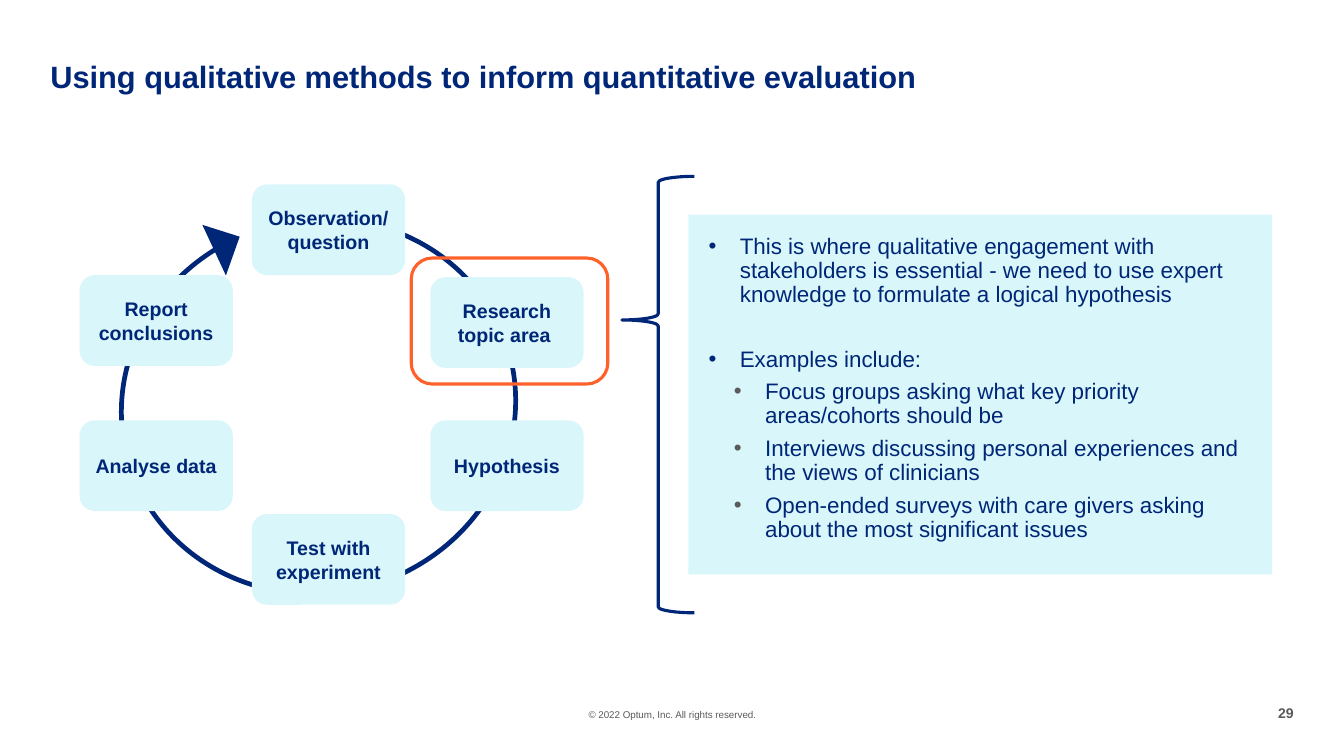
import pptx
import pptx.dml.color
import pptx.enum.shapes
import pptx.enum.text
import pptx.oxml
import pptx.oxml.ns
import pptx.util

RGBColor = pptx.dml.color.RGBColor
Shape = pptx.enum.shapes.MSO_SHAPE
Align = pptx.enum.text.PP_ALIGN
Anchor = pptx.enum.text.MSO_ANCHOR
Pt = pptx.util.Pt

NAVY = RGBColor(0x00, 0x26, 0x77)
AQUA = RGBColor(0xD9, 0xF6, 0xFA)
ORANGE = RGBColor(0xFF, 0x61, 0x2B)
GREY = RGBColor(0x5A, 0x5A, 0x5A)

COLUMNS, ROWS = 40, 30
LEFT, MIDDLE, RIGHT = 2.37, 7.5, 12.81
NODE_SIZE = (4.56, 3.6)
NODES = [
    ("Observation/ question", MIDDLE, 7.32),
    ("Report conclusions", LEFT, 10.92),
    ("Research topic area ", RIGHT, 11),
    ("Analyse data", LEFT, 16.68),
    ("Hypothesis", RIGHT, 16.68),
    ("Test with experiment", MIDDLE, 20.4),
]
POINTS = [
    (0, 0, "This is where qualitative engagement with stakeholders is essential"
           " - we need to use expert knowledge to formulate a logical hypothesis"),
    (0, 29, "Examples include:"),
    (1, 6, "Focus groups asking what key priority areas/cohorts should be"),
    (1, 6, "Interviews discussing personal experiences and the views of clinicians"),
    (1, 6, "Open-ended surveys with care givers asking about the most significant issues"),
]


def apply(target, formats):
    """Set every attribute named in formats on target."""
    for name, value in formats.items():
        setattr(target, name, value)


class Page:
    """Draws styled elements on one slide, measured in grid columns and rows."""

    def __init__(self, deck):
        """Add a title-only slide to the deck."""
        self.column = deck.slide_width / COLUMNS
        self.row = deck.slide_height / ROWS
        self.slide = deck.slides.add_slide(deck.slide_layouts[5])

    def frame(self, left, top, width, height):
        """Turn grid units into slide lengths."""
        return (round(left * self.column), round(top * self.row),
                round(width * self.column), round(height * self.row))

    def add_span(self, para, text, size, color=NAVY, bold=False):
        """Add one styled span of text to a paragraph."""
        span = para.add_run()
        span.text = text
        apply(span.font, {"name": "Arial", "size": Pt(size), "bold": bold})
        span.font.color.rgb = color

    def setup(self, box, margin=0.0, anchor=Anchor.TOP):
        """Give a box wrapped text with equal margins."""
        inset = pptx.util.Inches(margin)
        apply(box.text_frame, {
            "word_wrap": True, "auto_size": pptx.enum.text.MSO_AUTO_SIZE.NONE,
            "vertical_anchor": anchor, "margin_left": inset, "margin_right": inset,
            "margin_top": inset, "margin_bottom": inset})
        return box.text_frame

    def title(self, text, place):
        """Move and fill the title placeholder."""
        box = self.slide.shapes.title
        apply(box, dict(zip(("left", "top", "width", "height"), self.frame(*place))))
        para = self.setup(box).paragraphs[0]
        apply(para, {"alignment": Align.LEFT, "line_spacing": 0.9})
        self.add_span(para, text, 22, bold=True)

    def label(self, text, place, size, align, bold=False):
        """Add a small grey text box."""
        box = self.slide.shapes.add_textbox(*self.frame(*place))
        para = self.setup(box).paragraphs[0]
        para.alignment = align
        self.add_span(para, text, size, GREY, bold)

    def shape(self, kind, place, fill=None, line=None, adjustments=(), rotation=0):
        """Add a preset shape with an optional fill and outline."""
        box = self.slide.shapes.add_shape(kind, *self.frame(*place))
        box.shadow.inherit = False
        box.rotation = rotation
        for index, value in enumerate(adjustments):
            box.adjustments[index] = value
        if fill is None:
            box.fill.background()
        else:
            box.fill.solid()
            box.fill.fore_color.rgb = fill
        if line is None:
            box.line.fill.background()
        else:
            box.line.color.rgb = line
            box.line.width = Pt(2.25)
        return box

    def node(self, text, left, top):
        """Add one step of the research cycle."""
        box = self.shape(Shape.ROUNDED_RECTANGLE, (left, top, *NODE_SIZE), AQUA)
        para = self.setup(box, 0.08, Anchor.MIDDLE).paragraphs[0]
        para.alignment = Align.CENTER
        self.add_span(para, text, 14, bold=True)

    def bullet(self, para, level):
        """Give a paragraph a hanging bullet for its level."""
        properties = para._p.get_or_add_pPr()
        hang = pptx.util.Inches(0.31)
        properties.set("marL", str(hang + level * pptx.util.Inches(0.25)))
        properties.set("indent", str(-hang))
        namespace = pptx.oxml.ns.nsdecls("a")
        color = GREY if level else NAVY
        for markup in (f'<a:buClr {namespace}><a:srgbClr val="{color}"/></a:buClr>',
                       f'<a:buFont {namespace} typeface="Arial"/>',
                       f'<a:buChar {namespace} char="•"/>'):
            properties.append(pptx.oxml.parse_xml(markup))

    def panel(self, points, place):
        """Add a filled panel with a bulleted list."""
        text_frame = self.setup(self.shape(Shape.RECTANGLE, place, AQUA), 0.2)
        for index, (level, before, text) in enumerate(points):
            para = text_frame.add_paragraph() if index else text_frame.paragraphs[0]
            self.bullet(para, level)
            apply(para, {"level": level, "alignment": Align.LEFT, "line_spacing": 0.9})
            if index:
                para.space_before = Pt(before)
            self.add_span(para, text, 16)


def main():
    """Build and save the deck."""
    deck = pptx.Presentation()
    apply(deck, {"slide_width": pptx.util.Inches(13.33),
                 "slide_height": pptx.util.Inches(7.5)})
    page = Page(deck)
    page.label("© 2022 Optum, Inc. All rights reserved.",
               (15.42, 28.12, 9.18, 0.48), 7, Align.CENTER)
    page.label("29", (36.5, 27.96, 2, 0.68), 10, Align.RIGHT, bold=True)
    page.shape(Shape.CIRCULAR_ARROW, (3.09, 7.16, 12.78, 17.92), NAVY, rotation=254.4,
               adjustments=(0.011, 5.298, 205.102, 3.224, 0.065))
    page.panel(POINTS, (20.49, 8.52, 17.37, 14.28))
    page.title("Using qualitative methods to inform quantitative evaluation",
               (1.5, 2.44, 31.5, 1.32))
    page.shape(Shape.LEFT_BRACE, (18.51, 7, 2.16, 17.32), line=NAVY,
               adjustments=(0.083, 0.329))
    for text, left, top in NODES:
        page.node(text, left, top)
    page.shape(Shape.ROUNDED_RECTANGLE, (12.24, 10.24, 5.85, 5), line=ORANGE)
    deck.save("out.pptx")


if __name__ == "__main__":
    main()
